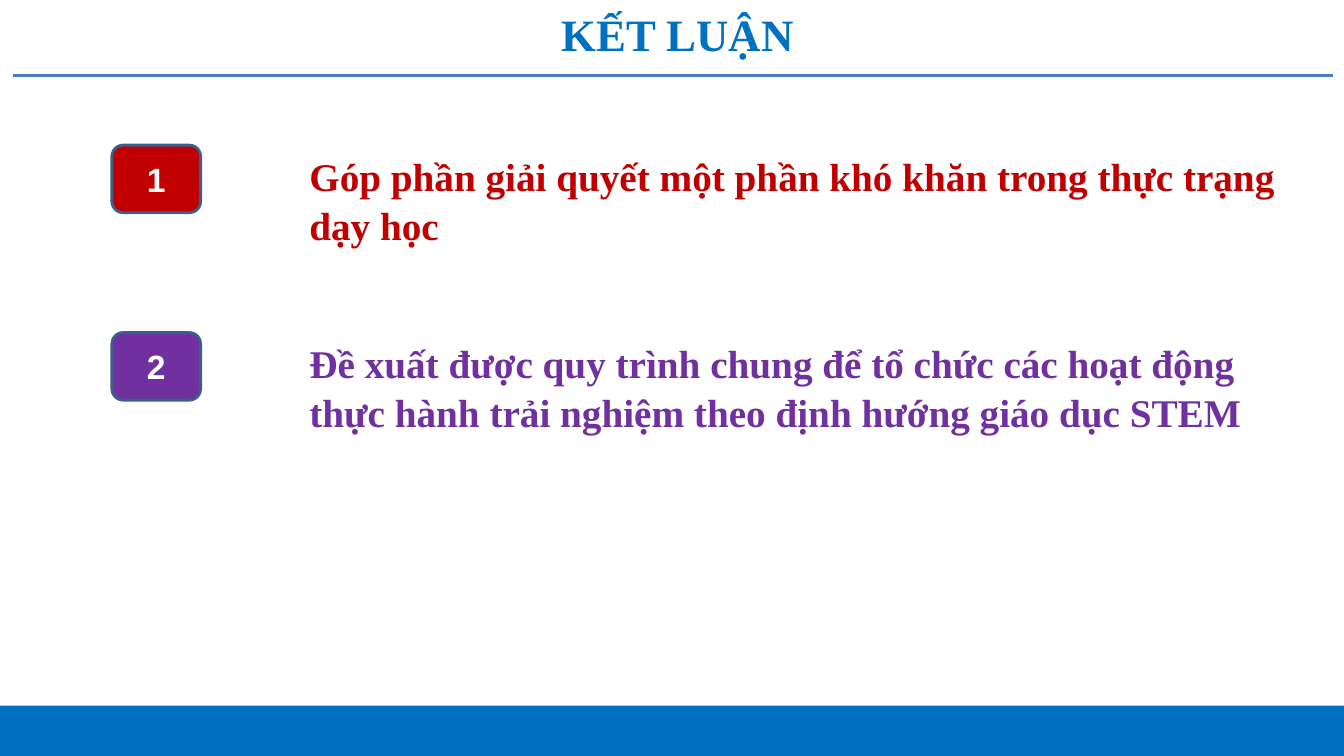
from lxml import etree
from pptx import Presentation
from pptx.dml.color import RGBColor
from pptx.enum import shapes, text
from pptx.util import Inches, Pt

BLUE = RGBColor(0x00, 0x70, 0xC0)
RULE_BLUE = RGBColor(0x4B, 0x7E, 0xBC)
BADGE_EDGE = RGBColor(0x3A, 0x5F, 0x8C)
RED = RGBColor(0xC0, 0x00, 0x00)
PURPLE = RGBColor(0x70, 0x30, 0xA0)
WHITE = RGBColor(0xFF, 0xFF, 0xFF)

SERIF = "Times New Roman"
SANS = "Arial"
DRAWING_NS = "http://schemas.openxmlformats.org/drawingml/2006/main"

FIRST_TOP = 1.44
ROW_PITCH = 1.86
CONCLUSIONS = [
    # wording, colour, box width, box height
    ("Góp phần giải quyết một phần khó khăn trong thực trạng dạy học",
     RED, 10.5, 1.49),
    ("Đề xuất được quy trình chung để tổ chức các hoạt động thực hành "
     "trải nghiệm theo định hướng giáo dục STEM",
     PURPLE, 10.59, 2.22),
]


def write(shape, wording, font_name, size, color, align, anchor):
    """Fill a shape with one bold paragraph and return the paragraph."""
    frame = shape.text_frame
    frame.word_wrap = True
    frame.vertical_anchor = anchor
    para = frame.paragraphs[0]
    para.text = wording
    para.alignment = align
    para.font.name = font_name
    para.font.size = Pt(size)
    para.font.bold = True
    para.font.color.rgb = color
    return para


def add_block(page, kind, left, top, width, height, fill, edge=None):
    block = page.shapes.add_shape(kind, Inches(left), Inches(top),
                                  Inches(width), Inches(height))
    block.shadow.inherit = False
    block.fill.solid()
    block.fill.fore_color.rgb = fill
    if edge is None:
        block.line.fill.background()
    else:
        block.line.color.rgb = edge
        block.line.width = Pt(2)
    return block


def add_rule(page, left, right, top):
    rule = page.shapes.add_connector(
        shapes.MSO_CONNECTOR.STRAIGHT,
        Inches(left), Inches(top), Inches(right), Inches(top))
    rule.line.color.rgb = RULE_BLUE
    rule.line.width = Pt(2)
    etree.SubElement(rule._element.spPr, f"{{{DRAWING_NS}}}effectLst")


def add_title(page, wording):
    box = page.shapes.add_textbox(Inches(0), Inches(0),
                                  Inches(13.44), Inches(0.67))
    write(box, wording, SERIF, 32, BLUE,
          text.PP_ALIGN.CENTER, text.MSO_ANCHOR.MIDDLE)


def add_conclusion(page, number, top, wording, color, width, height):
    # Indented statement
    box = page.shapes.add_textbox(Inches(2.47), Inches(top),
                                  Inches(width), Inches(height))
    para = write(box, wording, SERIF, 28, color,
                 text.PP_ALIGN.LEFT, text.MSO_ANCHOR.TOP)
    para.level = 1
    para.line_spacing = 1.04
    para.space_before = Pt(2)
    properties = para._p.get_or_add_pPr()
    properties.set("marL", str(Inches(0.5)))
    properties.set("indent", "0")

    # Numbered badge
    badge = add_block(page, shapes.MSO_SHAPE.ROUNDED_RECTANGLE,
                      1.11, top, 0.88, 0.67, color, BADGE_EDGE)
    write(badge, str(number), SANS, 24, WHITE,
          text.PP_ALIGN.CENTER, text.MSO_ANCHOR.MIDDLE)


def main():
    deck = Presentation()
    deck.slide_width = Inches(13.33)
    deck.slide_height = Inches(7.5)
    page = deck.slides.add_slide(deck.slide_layouts[6])

    # Footer band and header
    add_block(page, shapes.MSO_SHAPE.RECTANGLE, -0.05, 7, 13.44, 0.5, BLUE)
    add_rule(page, 0.13, 13.22, 0.75)
    add_title(page, "KẾT LUẬN")

    # Numbered conclusions
    for index, conclusion in enumerate(CONCLUSIONS):
        add_conclusion(page, index + 1, FIRST_TOP + index * ROW_PITCH,
                       *conclusion)

    deck.save("out.pptx")


if __name__ == "__main__":
    main()
